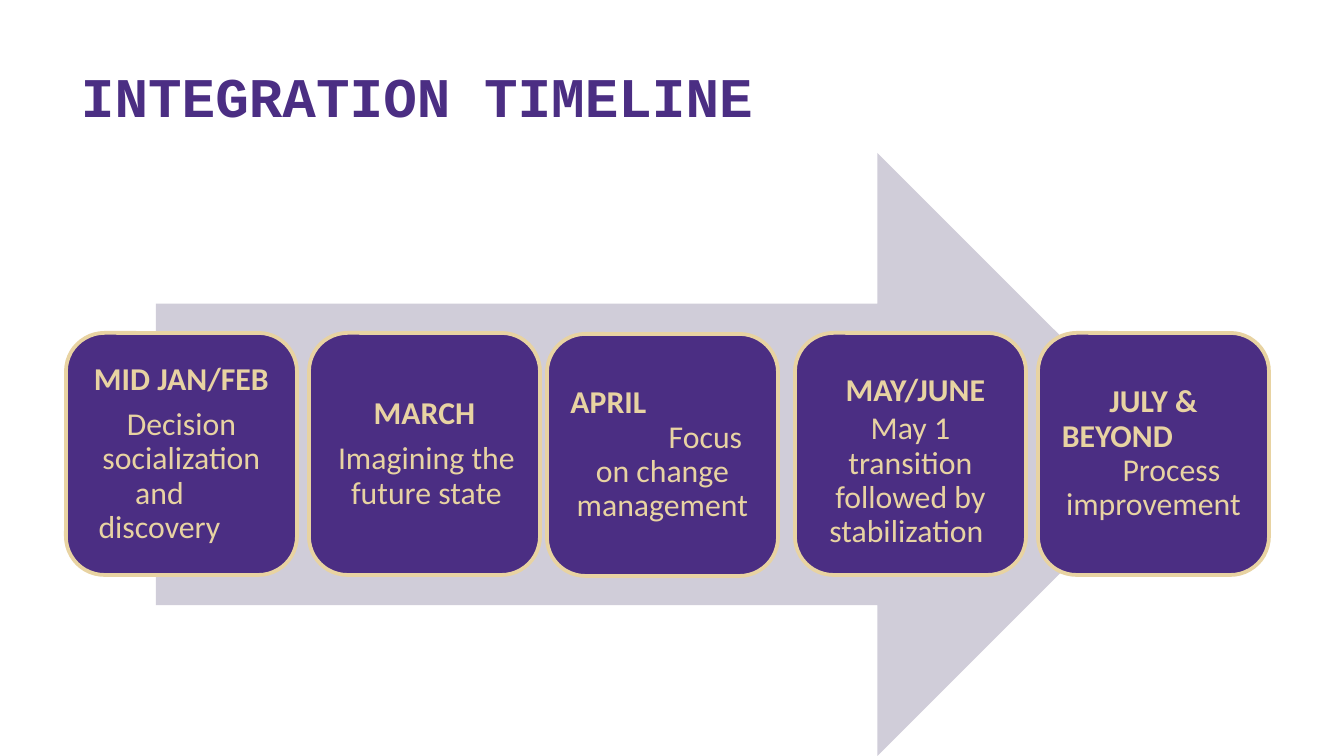
from pptx import Presentation
from pptx.dml.color import RGBColor
from pptx.enum.shapes import MSO_SHAPE
from pptx.enum.text import MSO_ANCHOR, PP_ALIGN
from pptx.util import Emu, Pt

PX_PER_INCH = 134.4
COLORS = {"purple": "4B2E83", "gold": "E8D3A2", "arrow": "D0CDD9"}

CARD_WIDTH, CARD_HEIGHT, CARD_PITCH = 231, 242, 243
CARD_PADDING = 12

# Each line: (text, bold, sideways shift in px, space after in points)
CARDS = [
    {"lines": [("MID JAN/FEB", True, 0, 6),
               ("Decision socialization", False, 0, 0),
               ("and discovery", False, -22, 0)]},
    {"lines": [("MARCH", True, 0, 6),
               ("Imagining the future state", False, 2, 0)]},
    {"nudge": (-5, 1),
     "lines": [("APRIL", True, -54, 0),
               ("Focus", False, 43, 0),
               ("on change management", False, 0, 0)]},
    {"inset": 15, "drop": 16,
     "lines": [("MAY/JUNE", True, 5, 2),
               ("May 1 transition followed by", False, 0, 0),
               ("stabilization", False, -4, 0)]},
    {"lines": [("JULY &", True, 0, 0),
               ("BEYOND", True, -36, 0),
               ("Process", False, 18, 0),
               ("improvement", False, 0, 0)]},
]


def px(length):
    return Emu(round(length * 914400 / PX_PER_INCH))


def add_text(slide, box, lines, *, size, color, font, align=PP_ALIGN.LEFT,
             anchor=MSO_ANCHOR.MIDDLE, insets=(0, 0, 0, 0), spacing=1.0):
    """Add a text box; insets run left, top, right, bottom."""
    shape = slide.shapes.add_textbox(*map(px, box))
    frame = shape.text_frame
    frame.word_wrap = True
    frame.vertical_anchor = anchor
    (frame.margin_left, frame.margin_top,
     frame.margin_right, frame.margin_bottom) = map(px, insets)
    for index, (text, bold, shift, space_after) in enumerate(lines):
        paragraph = frame.paragraphs[0] if index == 0 else frame.add_paragraph()
        paragraph.alignment = align
        paragraph.line_spacing = spacing
        paragraph.space_after = Pt(space_after)
        # An indent on one side moves a centred line by half its width
        properties = paragraph._p.get_or_add_pPr()
        properties.set("marL", str(px(max(2 * shift, 0))))
        properties.set("marR", str(px(max(-2 * shift, 0))))
        properties.set("indent", "0")
        run = paragraph.add_run()
        run.text = text
        run.font.name = font
        run.font.size = Pt(size)
        run.font.bold = bold
        run.font.color.rgb = RGBColor.from_string(COLORS[color])
    return shape


def add_block(slide, kind, box, fill, line=None):
    shape = slide.shapes.add_shape(kind, *map(px, box))
    shape.shadow.inherit = False
    shape.fill.solid()
    shape.fill.fore_color.rgb = RGBColor.from_string(COLORS[fill])
    if line:
        shape.line.color.rgb = RGBColor.from_string(COLORS[line])
        shape.line.width = Pt(2)
    else:
        shape.line.fill.background()
    return shape


def add_title(slide, box):
    add_text(slide, box, [("INTEGRATION TIMELINE", True, 0, 0)], size=30,
             color="purple", font="Courier New", anchor=MSO_ANCHOR.BOTTOM,
             insets=(14, 0, 13, 5))


def add_card(slide, box, card):
    left, top, width, height = box
    add_block(slide, MSO_SHAPE.ROUNDED_RECTANGLE, box, "purple", "gold")
    inset = card.get("inset", 9)
    text_box = (left + CARD_PADDING, top + CARD_PADDING,
                width - 2 * CARD_PADDING, height - 2 * CARD_PADDING)
    add_text(slide, text_box, card["lines"], size=17, color="gold",
             font="Calibri", align=PP_ALIGN.CENTER, spacing=0.9,
             insets=(inset, inset + card.get("drop", 0), inset, inset))


def add_timeline(slide, box):
    left, top, width, height = box
    # Background arrow
    add_block(slide, MSO_SHAPE.RIGHT_ARROW,
              (left + 90, top, width - 181, height), "arrow")
    # Row of cards, centred on the arrow
    card_top = top + (height - CARD_HEIGHT) // 2
    for index, card in enumerate(CARDS):
        shift_x, shift_y = card.get("nudge", (0, 0))
        add_card(slide, (left + index * CARD_PITCH + shift_x,
                         card_top + shift_y, CARD_WIDTH, CARD_HEIGHT), card)


def main():
    presentation = Presentation()
    presentation.slide_width, presentation.slide_height = px(1344), px(756)
    slide = presentation.slides.add_slide(presentation.slide_layouts[6])
    add_title(slide, (67, 54, 1210, 80))
    add_timeline(slide, (66, 153, 1204, 603))
    presentation.save("out.pptx")


if __name__ == "__main__":
    main()
